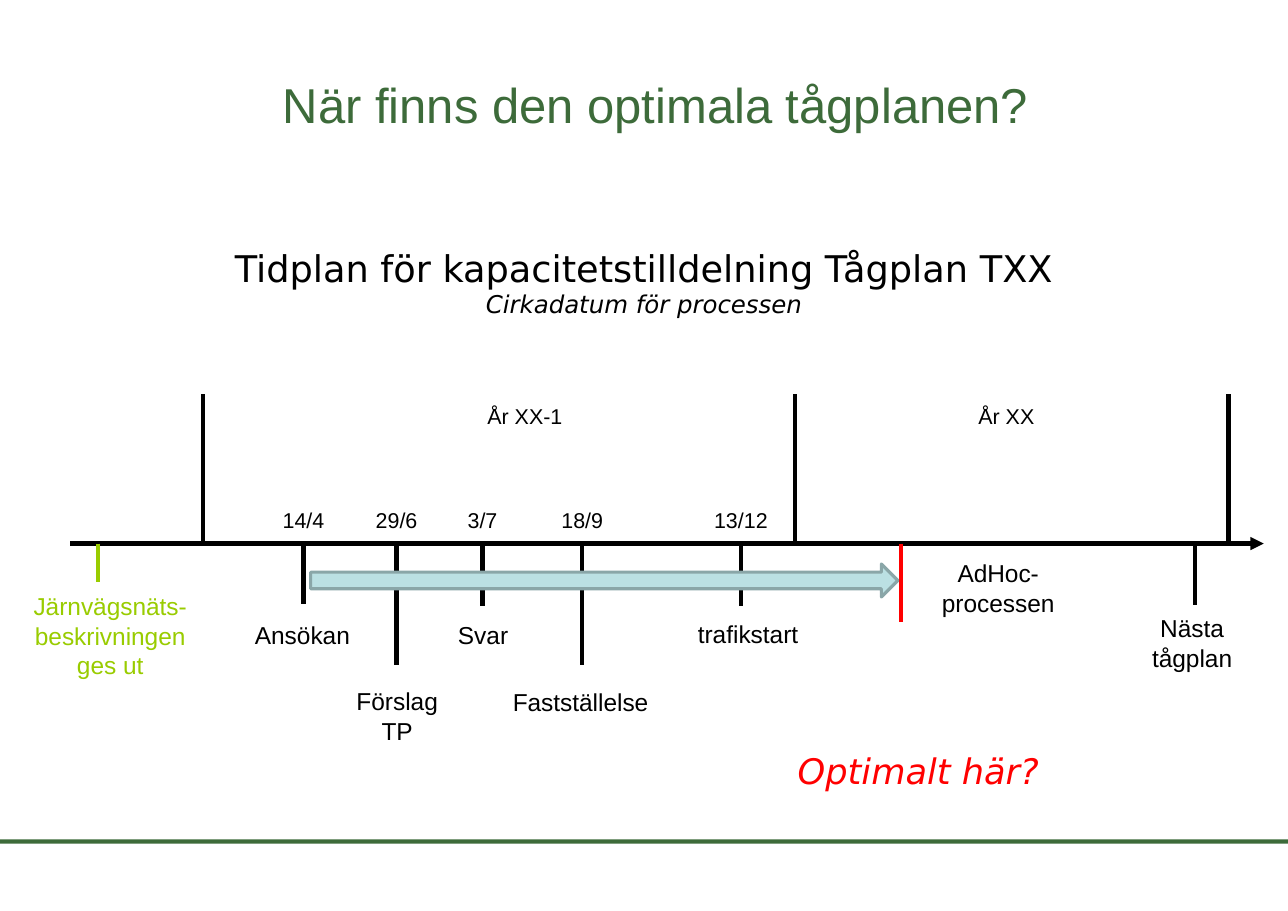
from lxml import etree
from pptx import Presentation
from pptx.dml.color import RGBColor
from pptx.enum.shapes import MSO_CONNECTOR, MSO_SHAPE
from pptx.enum.text import MSO_ANCHOR, PP_ALIGN
from pptx.oxml.ns import qn
from pptx.util import Inches, Pt

STRAIGHT = MSO_CONNECTOR.STRAIGHT
RECTANGLE = MSO_SHAPE.RECTANGLE
RIGHT_ARROW = MSO_SHAPE.RIGHT_ARROW
TOP, MIDDLE = MSO_ANCHOR.TOP, MSO_ANCHOR.MIDDLE
LEFT, CENTER = PP_ALIGN.LEFT, PP_ALIGN.CENTER

COLORS = {
    "forest": "3D6B3A", "black": "000000", "lime": "99CC00",
    "red": "FF0000", "arrow": "BBE0E3", "arrow_edge": "8AA6A8",
}
SANS, HEADING = "Arial", "DejaVu Sans"

# Grid with cells of a tenth of an inch
COLUMNS, ROWS = 116.9, 82.7
AXIS_ROW = 49.35
YEAR_ROW, DATE_ROW = 36, 45.4
NARROW, WIDE = 12.7, 15.4

# Tick column, tick end row, date, label, label centre, label row, label width
MILESTONES = [
    (27.55, 54.8, "14/4", "Ansökan", 27.45, 55.7, WIDE),
    (36, 60.4, "29/6", "Förslag TP", 36.05, 61.7, NARROW),
    (43.8, 55, "3/7", "Svar", 43.85, 55.7, NARROW),
    (52.85, 60.4, "18/9", "Fastställelse", 52.7, 61.8, WIDE),
    (67.25, 55, "13/12", "trafikstart", 67.9, 55.6, WIDE),
]
YEAR_LIMITS = [18.45, 72.15, 111.5]
YEARS = [(47.65, "År XX-1"), (91.35, "År XX")]


def grid(cells):
    return Inches(cells / 10)


def color(name):
    return RGBColor.from_string(COLORS[name])


def add_text(slide, lines, center, top, width, height, sizes=(16,), font=SANS,
             fill="black", align=CENTER, anchor=TOP, italics=(False,), wrap=True):
    """Add one paragraph per line; the last size and italic value carry on."""
    shape = slide.shapes.add_textbox(
        grid(center - width / 2), grid(top), grid(width), grid(height))
    frame = shape.text_frame
    frame.word_wrap = wrap
    frame.vertical_anchor = anchor
    frame.margin_left = frame.margin_right = grid(1.1)
    frame.margin_top = frame.margin_bottom = grid(0.6)
    for index, line in enumerate(lines):
        paragraph = frame.paragraphs[0] if index == 0 else frame.add_paragraph()
        paragraph.alignment = align
        run = paragraph.add_run()
        run.text = line
        run.font.name = font
        run.font.size = Pt(sizes[min(index, len(sizes) - 1)])
        run.font.italic = italics[min(index, len(italics) - 1)]
        run.font.color.rgb = color(fill)


def add_line(slide, start, end, stroke="black", weight=2.89, arrow=False):
    connector = slide.shapes.add_connector(
        STRAIGHT, *(grid(cells) for cells in (*start, *end)))
    connector.line.color.rgb = color(stroke)
    connector.line.width = Pt(weight)
    if arrow:
        etree.SubElement(connector.line._get_or_add_ln(), qn("a:tailEnd"),
                         type="triangle")
    etree.SubElement(connector._element.spPr, qn("a:effectLst"))


def add_tick(slide, column, top, bottom, **style):
    add_line(slide, (column, top), (column, bottom), **style)


def add_block(slide, kind, left, top, width, height, fill, edge=None):
    shape = slide.shapes.add_shape(
        kind, grid(left), grid(top), grid(width), grid(height))
    shape.shadow.inherit = False
    shape.fill.solid()
    shape.fill.fore_color.rgb = color(fill)
    if edge:
        shape.line.color.rgb = color(edge)
        shape.line.width = Pt(2)
    else:
        shape.line.fill.background()


def main():
    presentation = Presentation()
    presentation.slide_width = grid(COLUMNS)
    presentation.slide_height = grid(ROWS)
    slide = presentation.slides.add_slide(presentation.slide_layouts[6])

    # Footer rule and headings
    add_block(slide, RECTANGLE, 0, 76.2, COLUMNS, 0.4, "forest")
    add_text(slide, ["När finns den optimala tågplanen?"], 59.55, 2.5, 105.1, 13.8,
             sizes=(32,), fill="forest", anchor=MIDDLE)
    add_text(slide, ["Tidplan för kapacitetstilldelning Tågplan TXX",
                     "Cirkadatum för processen"], COLUMNS / 2, 19.4, 111.5, 12.4,
             sizes=(24, 16), font=HEADING, anchor=MIDDLE, italics=(False, True))

    # Time axis and years
    add_line(slide, (6.4, AXIS_ROW), (114.7, AXIS_ROW), arrow=True)
    for column in YEAR_LIMITS:
        add_tick(slide, column, 35.8, AXIS_ROW)
    for center, year in YEARS:
        add_text(slide, [year], center, YEAR_ROW, NARROW, 3.3, sizes=(14,))

    # Milestones
    for column, end, date, label, center, row, width in MILESTONES:
        add_tick(slide, column, AXIS_ROW, end)
        add_text(slide, [date], column, DATE_ROW, NARROW, 3.3, sizes=(14,))
        add_text(slide, [label], center, row, width, 5.5)

    # Network statement before the first year
    add_tick(slide, 8.9, AXIS_ROW, 52.8, stroke="lime", weight=2.25)
    add_text(slide, ["Järnvägsnäts-", "beskrivningen", "ges ut"], 10, 53.1, 19.2, 10.9,
             fill="lime")

    # Ad hoc process and next timetable
    add_text(slide, ["AdHoc-processen"], 90.6, 50.1, WIDE, 6.2)
    add_tick(slide, 108.45, AXIS_ROW, 54.9)
    add_text(slide, ["Nästa", "tågplan"], 108.2, 55.1, WIDE, 6.2)

    # Optimal point
    add_block(slide, RIGHT_ARROW, 28.2, 51.2, 53.3, 3, "arrow", edge="arrow_edge")
    add_tick(slide, 81.8, AXIS_ROW, 56.5, stroke="red")
    add_text(slide, ["Optimalt här?"], 83.55, 67.4, 24.5, 5, sizes=(23,), font=HEADING,
             fill="red", align=LEFT, italics=(True,), wrap=False)

    presentation.save("out.pptx")


if __name__ == "__main__":
    main()
